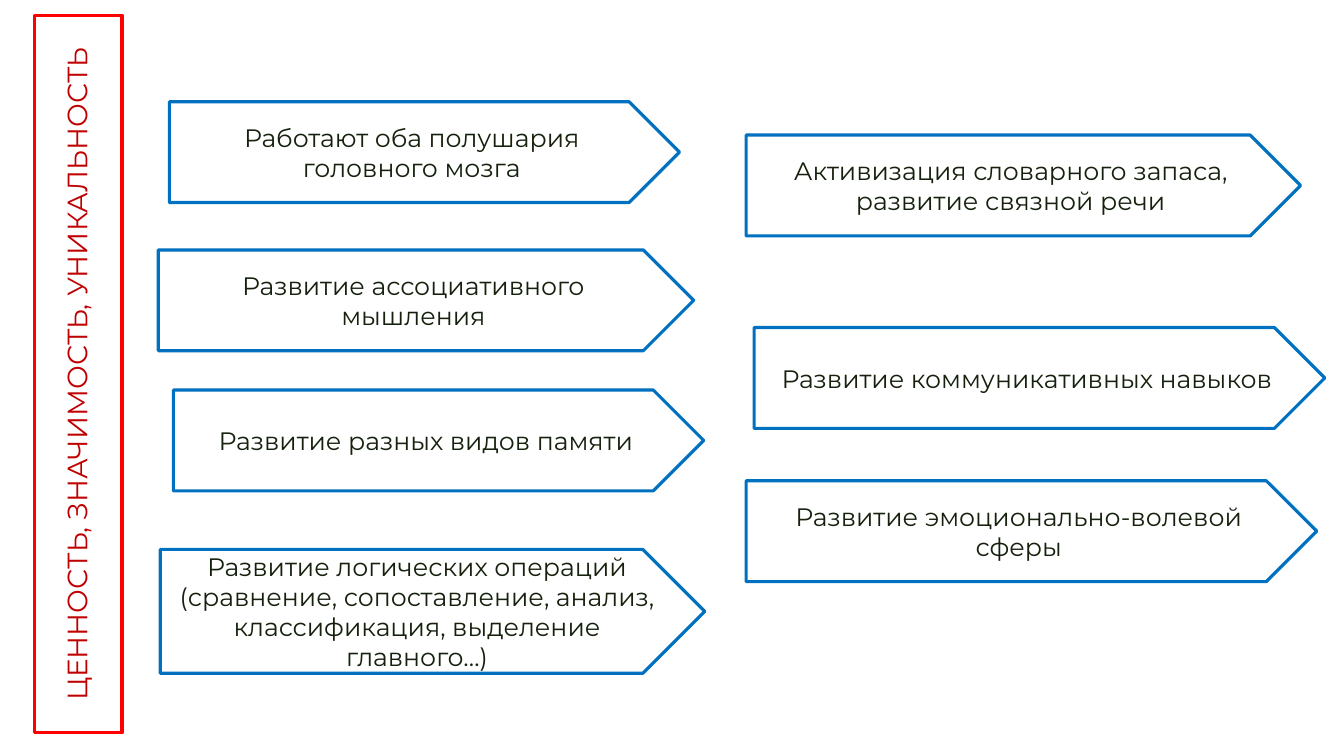
import dataclasses

import pptx
import pptx.dml.color
import pptx.enum.shapes
import pptx.enum.text
import pptx.util

Inches = pptx.util.Inches
Pt = pptx.util.Pt
RGB = pptx.dml.color.RGBColor.from_string
SHAPES = pptx.enum.shapes.MSO_SHAPE


@dataclasses.dataclass(frozen=True)
class Theme:
    font: str = "Montserrat"
    title_size: float = 20
    body_size: float = 18
    title_color: str = "C00000"
    title_line: str = "FF0000"
    body_color: str = "15210D"
    arrow_line: str = "0070C0"
    line_width: float = 2.25


THEME = Theme()

TITLE = "ЦЕННОСТЬ, ЗНАЧИМОСТЬ, УНИКАЛЬНОСТЬ"
TITLE_BOX = (0.34, 0.15, 0.87, 7.12)

# Each benefit: text and its box (left, top, width, height)
LEFT_BENEFITS = [
    ("Работают оба полушария головного мозга", (1.68, 1.01, 5.06, 1)),
    ("Развитие ассоциативного мышления", (1.57, 2.48, 5.31, 1)),
    ("Развитие разных видов памяти", (1.72, 3.87, 5.26, 1)),
    ("Развитие логических операций (сравнение, сопоставление, анализ, "
     "классификация, выделение главного…)", (1.59, 5.45, 5.4, 1.23)),
]
RIGHT_BENEFITS = [
    ("Активизация словарного запаса, развитие связной речи", (7.4, 1.34, 5.5, 1)),
    ("Развитие коммуникативных навыков", (7.48, 3.25, 5.66, 1)),
    ("Развитие эмоционально-волевой сферы", (7.4, 4.77, 5.66, 1)),
]


def add_outlined(slide, kind, box, line, text, size, color):
    """Add an unfilled outlined shape with one centred paragraph."""
    sp = slide.shapes.add_shape(kind, *map(Inches, box))
    sp.shadow.inherit = False
    sp.fill.background()
    sp.line.color.rgb = RGB(line)
    sp.line.width = Pt(THEME.line_width)

    tf = sp.text_frame
    tf.word_wrap = True
    tf.vertical_anchor = pptx.enum.text.MSO_ANCHOR.MIDDLE
    p = tf.paragraphs[0]
    p.alignment = pptx.enum.text.PP_ALIGN.CENTER
    r = p.add_run()
    r.text = text
    r.font.name = THEME.font
    r.font.size = Pt(size)
    r.font.color.rgb = RGB(color)
    return sp


def add_side_title(slide, box, text):
    """Fill a tall box with a title that reads from bottom to top."""
    left, top, width, height = box
    # The shape is laid out flat around the same centre, then turned
    shift = (height - width) / 2
    flat = (left - shift, top + shift, height, width)
    sp = add_outlined(slide, SHAPES.RECTANGLE, flat, THEME.title_line,
                      text, THEME.title_size, THEME.title_color)
    sp.rotation = 270
    sp.text_frame.paragraphs[0].line_spacing = 0.9


def add_benefits(slide, benefits):
    """Draw one column of arrow-shaped benefits."""
    for text, box in benefits:
        add_outlined(slide, SHAPES.PENTAGON, box, THEME.arrow_line,
                     text, THEME.body_size, THEME.body_color)


def main():
    prs = pptx.Presentation()
    prs.slide_width = Inches(13.33)
    prs.slide_height = Inches(7.5)
    slide = prs.slides.add_slide(prs.slide_layouts[6])

    add_side_title(slide, TITLE_BOX, TITLE)
    add_benefits(slide, LEFT_BENEFITS)
    add_benefits(slide, RIGHT_BENEFITS)

    prs.save("out.pptx")


if __name__ == "__main__":
    main()
